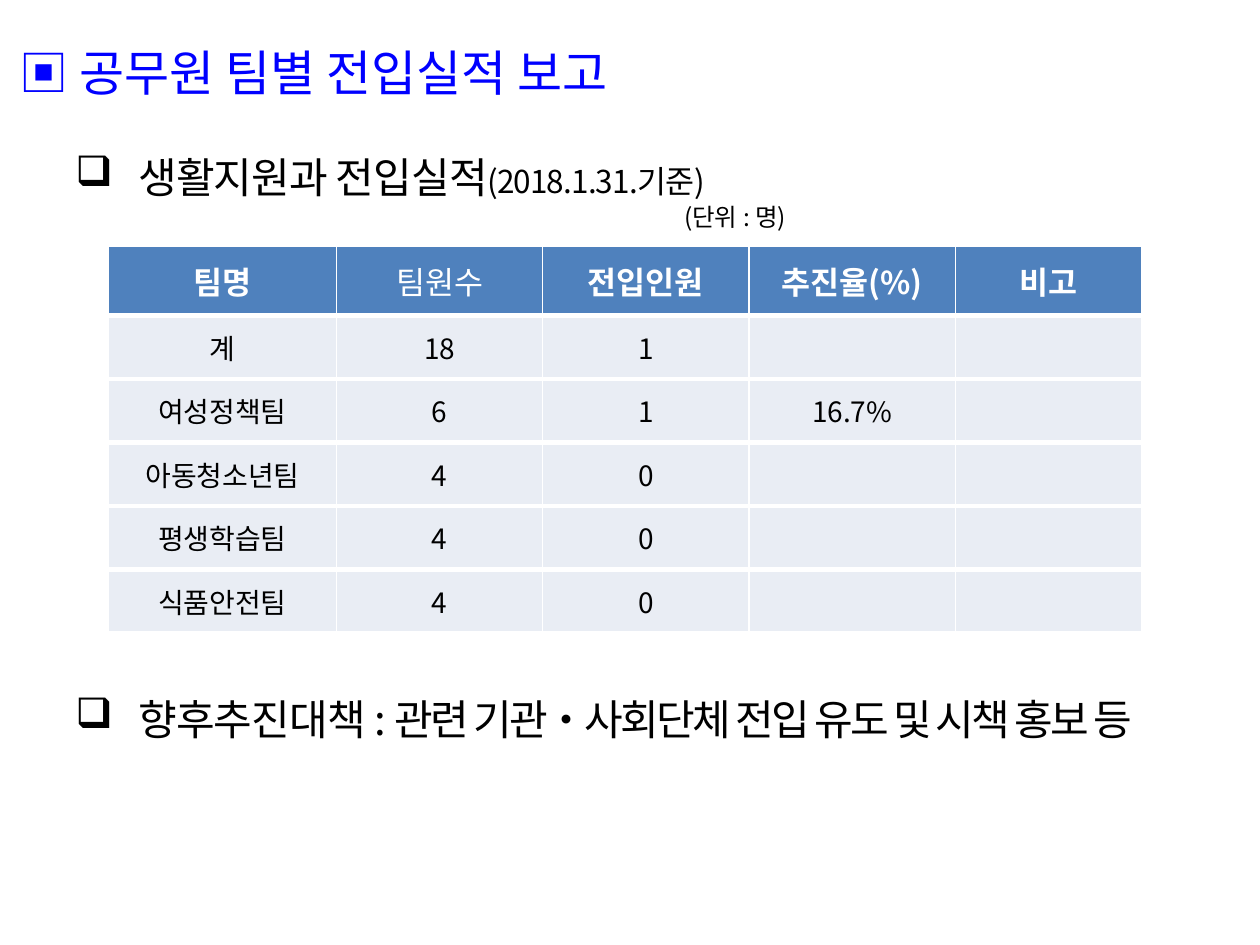
from lxml import etree
from pptx import Presentation
from pptx.dml.color import RGBColor
from pptx.enum import text
from pptx.oxml import ns
from pptx.util import Cm, Pt

FONT = "Noto Sans CJK KR"
BLUE = RGBColor(0x00, 0x00, 0xFF)
BLACK = RGBColor(0x00, 0x00, 0x00)
WHITE = RGBColor(0xFF, 0xFF, 0xFF)
HEADER_FILL = RGBColor(0x4F, 0x81, 0xBD)
BODY_FILL = RGBColor(0xE9, 0xED, 0xF4)

# Lines: left and middle height in cm, bullet, colour, runs (text, size, spacing in pt)
LINES = [
    (0.15, 1.45, None, BLUE, [("▣ 공무원 팀별 전입실적 보고", 28, 0)]),
    (1.27, 3.56, "❑", BLACK, [("생활지원과 전입실적", 24, -0.5),
                              ("(2018.1.31.기준)", 18, -0.5)]),
    (13.54, 4.37, None, BLACK, [("(단위 : 명)", 14, 0)]),
    (1.27, 14.48, "❑", BLACK, [("향후추진대책 : ", 24, -0.5),
                               ("관련 기관‧사회단체 전입 유도 및 시책 홍보 등", 24, -1.5)]),
]
LINE_WIDTH, LINE_HEIGHT, HANGING = 24, 1.6, 1.27

TEAMS = [
    ("팀명", "팀원수", "전입인원", "추진율(%)", "비고"),
    ("계", "18", "1", "", ""),
    ("여성정책팀", "6", "1", "16.7%", ""),
    ("아동청소년팀", "4", "0", "", ""),
    ("평생학습팀", "4", "0", "", ""),
    ("식품안전팀", "4", "0", "", ""),
]
TABLE_LEFT, TABLE_TOP = 2.19, 4.96
COLUMN_WIDTHS = [4.59, 4.16, 4.16, 4.16, 3.76]
ROW_HEIGHTS = [1.4] + [1.28] * 5


def add_element(parent, tag, **attributes):
    return etree.SubElement(parent, ns.qn(tag), attributes)


def set_font(font, size, color, bold=False):
    font.size, font.bold, font.name = Pt(size), bold, FONT
    font.color.rgb = color
    add_element(font._rPr, "a:ea", typeface=FONT)


def set_bullet(p, char):
    pPr = p._p.get_or_add_pPr()
    pPr.set("marL", str(Cm(HANGING)))
    pPr.set("indent", str(-Cm(HANGING)))
    add_element(pPr, "a:buChar", char=char)


def set_border(cell, side, width):
    ln = add_element(cell._tc.get_or_add_tcPr(), f"a:{side}", w=str(Pt(width)))
    add_element(add_element(ln, "a:solidFill"), "a:srgbClr", val=str(WHITE))


def add_line(slide, left, middle, bullet, color, runs):
    sp = slide.shapes.add_textbox(Cm(left), Cm(middle - LINE_HEIGHT / 2),
                                  Cm(LINE_WIDTH if left < 10 else 6), Cm(LINE_HEIGHT))
    tf = sp.text_frame
    tf.word_wrap = True
    tf.vertical_anchor = text.MSO_ANCHOR.MIDDLE
    p = tf.paragraphs[0]
    if bullet:
        set_bullet(p, bullet)
    for words, size, spacing in runs:
        r = p.add_run()
        r.text = words
        set_font(r.font, size, color)
        r.font._rPr.set("spc", str(int(spacing * 100)))


def add_team_table(slide):
    table = slide.shapes.add_table(
        len(TEAMS), len(COLUMN_WIDTHS), Cm(TABLE_LEFT), Cm(TABLE_TOP),
        Cm(sum(COLUMN_WIDTHS)), Cm(sum(ROW_HEIGHTS))).table
    for column, width in zip(table.columns, COLUMN_WIDTHS):
        column.width = Cm(width)
    for i, (row, height) in enumerate(zip(table.rows, ROW_HEIGHTS)):
        row.height = Cm(height)
        header = i == 0
        for j, (cell, words) in enumerate(zip(row.cells, TEAMS[i])):
            for side, width in (("lnL", 1), ("lnR", 1),
                                ("lnT", 1 if header else 3), ("lnB", 3)):
                set_border(cell, side, width)
            cell.fill.solid()
            cell.fill.fore_color.rgb = HEADER_FILL if header else BODY_FILL
            cell.vertical_anchor = text.MSO_ANCHOR.MIDDLE
            p = cell.text_frame.paragraphs[0]
            p.text = words
            p.alignment = text.PP_ALIGN.CENTER
            set_font(p.font, 18 if header else 16, WHITE if header else BLACK,
                     bold=header and j != 1)


prs = Presentation()
prs.slide_width, prs.slide_height = Cm(25.4), Cm(19.05)
s = prs.slides.add_slide(prs.slide_layouts[6])

# Headings and notes
for line in LINES:
    add_line(s, *line)

# Results by team
add_team_table(s)

prs.save("out.pptx")
